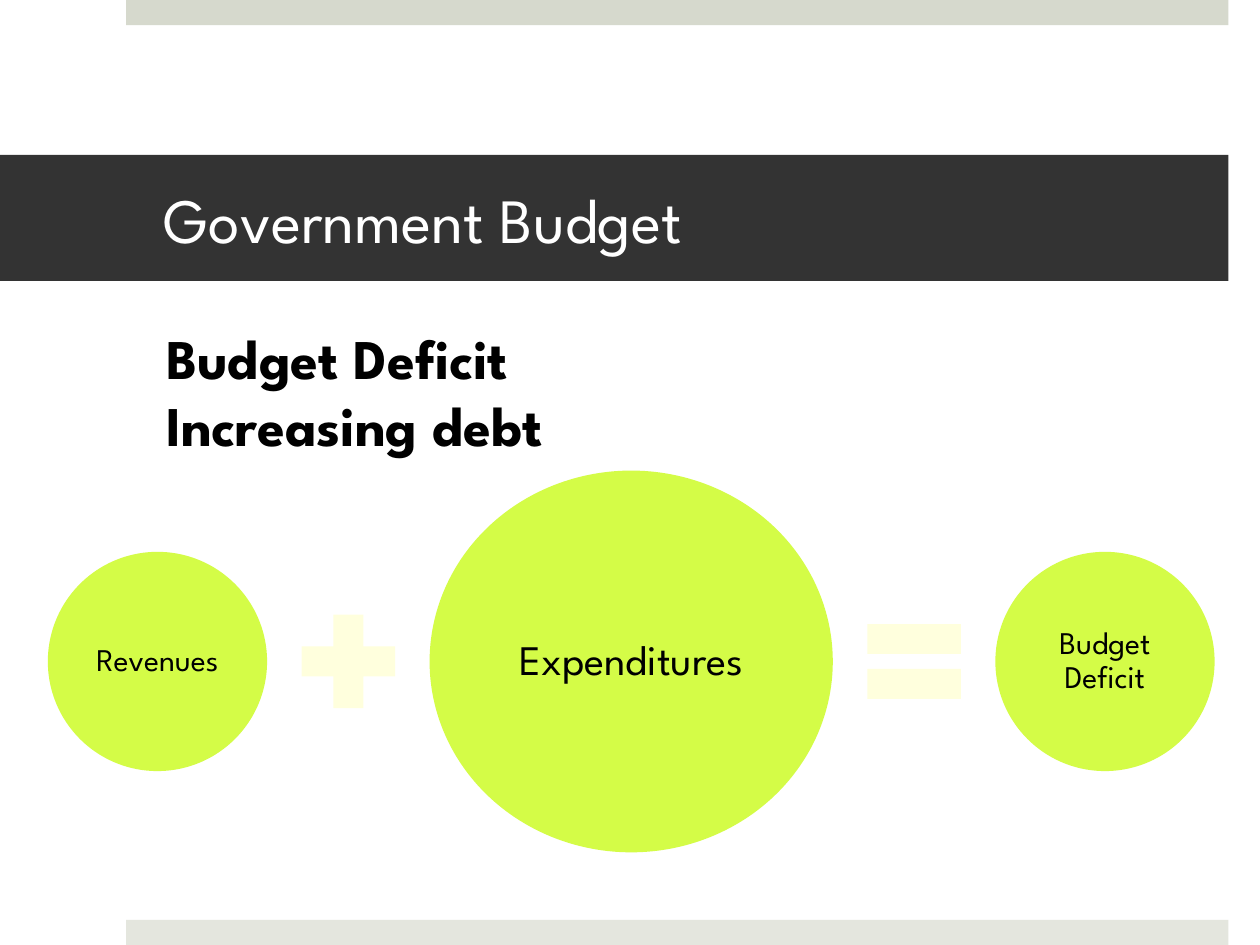
from dataclasses import dataclass

from pptx import Presentation
from pptx.dml.color import RGBColor
from pptx.enum.shapes import MSO_SHAPE as Shape
from pptx.enum.text import MSO_ANCHOR as Anchor, MSO_AUTO_SIZE as AutoSize, PP_ALIGN as Align
from pptx.util import Inches, Pt

# The slide is a grid of one-inch cells
COLS, ROWS = 10, 7.5
FONT = "League Spartan"
COLORS = {
    "top": "D6D9CD",
    "bottom": "E4E6DE",
    "band": "333333",
    "circle": "D4FC47",
    "sign": "FFFFDD",
    "white": "FFFFFF",
    "black": "000000",
}


@dataclass
class Box:
    col: float
    row: float
    cols: float
    rows: float

    def emu(self) -> list:
        return [Inches(n) for n in (self.col, self.row, self.cols, self.rows)]


@dataclass
class Term:
    kind: Shape
    cols: float
    rows: float
    color: str
    text: str = ""
    size: int = 18


def add_block(slide, kind: Shape, box: Box, color: str):
    sp = slide.shapes.add_shape(kind, *box.emu())
    sp.shadow.inherit = False
    sp.fill.solid()
    sp.fill.fore_color.rgb = RGBColor.from_string(COLORS[color])
    sp.line.fill.background()
    return sp


def set_text(sp, text: str, size: int, color: str, align: Align, bold: bool = False):
    tf = sp.text_frame
    tf.text = text
    for p in tf.paragraphs:
        p.alignment = align
        for r in p.runs:
            r.font.name, r.font.size, r.font.bold = FONT, Pt(size), bold
            r.font.color.rgb = RGBColor.from_string(COLORS[color])
    return tf


def set_margins(tf, left: float, right: float, vertical: float) -> None:
    tf.margin_left, tf.margin_right = Inches(left), Inches(right)
    tf.margin_top = tf.margin_bottom = Inches(vertical)


def add_equation(slide, terms: list[Term], start: float, middle: float, gap: float) -> None:
    col = start
    for term in terms:
        box = Box(col, middle - term.rows / 2, term.cols, term.rows)
        sp = add_block(slide, term.kind, box, term.color)
        if term.text:
            tf = set_text(sp, term.text, term.size, "black", Align.CENTER)
            tf.word_wrap = True
            tf.vertical_anchor = Anchor.MIDDLE
            tf.paragraphs[0].line_spacing = 0.9
            set_margins(tf, 0.03, 0.03, 0.03)
        col += term.cols + gap


def main() -> None:
    prs = Presentation()
    prs.slide_width, prs.slide_height = Inches(COLS), Inches(ROWS)
    slide = prs.slides.add_slide(prs.slide_layouts[6])

    # Edge strips
    strip = 0.2
    for row, color in ((0, "top"), (ROWS - strip, "bottom")):
        add_block(slide, Shape.RECTANGLE, Box(1, row, 8.75, strip), color)

    # Title band
    band = add_block(slide, Shape.RECTANGLE, Box(0, 1.23, 9.75, 1), "band")
    tf = set_text(band, "Government Budget", 36, "white", Align.LEFT)
    tf.word_wrap = True
    tf.vertical_anchor = Anchor.MIDDLE
    set_margins(tf, 1.3, 0.3, 0.05)

    # Equation: circles joined by signs
    add_equation(slide, [
        Term(Shape.OVAL, 1.74, 1.74, "circle", "Revenues"),
        Term(Shape.MATH_PLUS, 1.01, 1.01, "sign"),
        Term(Shape.OVAL, 3.2, 3.03, "circle", "Expenditures", 24),
        Term(Shape.MATH_EQUAL, 1.01, 1.01, "sign"),
        Term(Shape.OVAL, 1.74, 1.74, "circle", "Budget Deficit"),
    ], start=0.38, middle=5.25, gap=0.14)

    # Heading above the equation
    heading = slide.shapes.add_textbox(*Box(1.22, 2.52, 3.62, 1.18).emu())
    tf = set_text(heading, "Budget Deficit\nIncreasing debt", 32, "black", Align.LEFT, bold=True)
    tf.word_wrap = False
    tf.auto_size = AutoSize.SHAPE_TO_FIT_TEXT

    prs.save("out.pptx")


if __name__ == "__main__":
    main()
